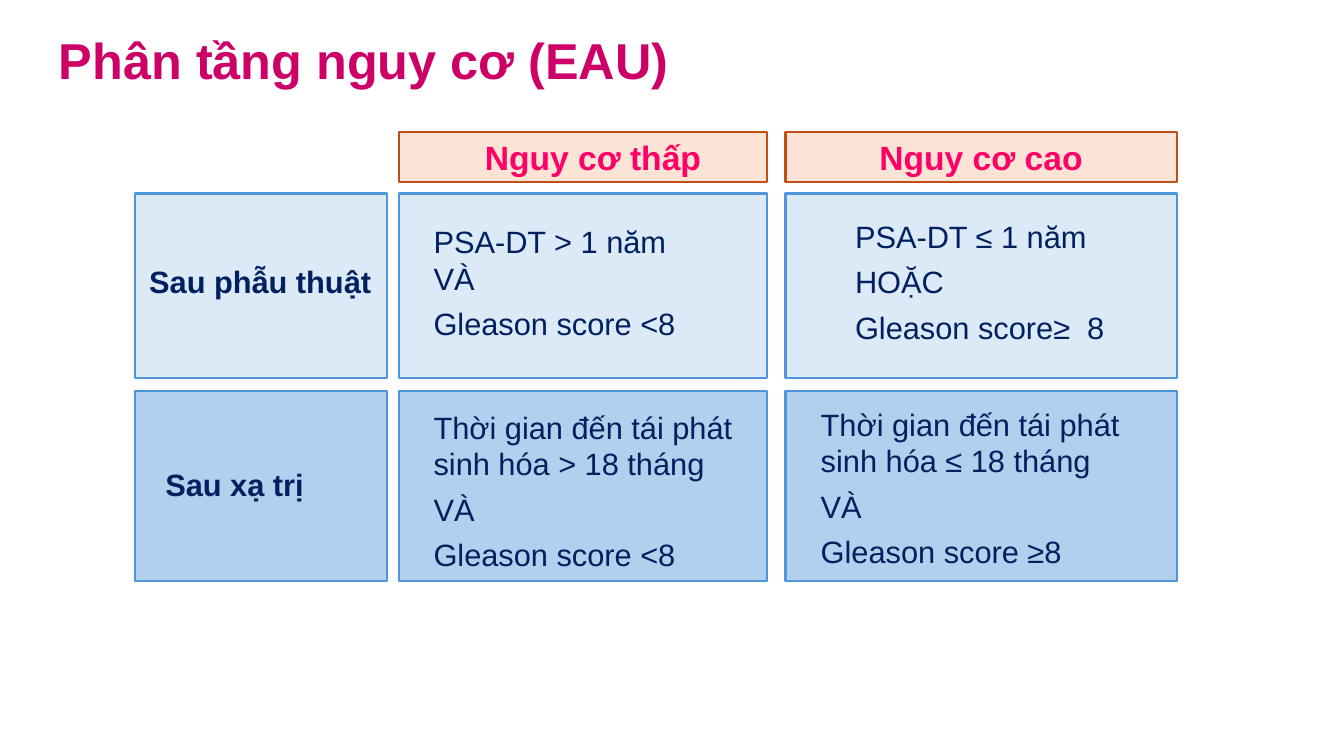
from pptx import Presentation
from pptx.dml.color import RGBColor as RGB
from pptx.enum.shapes import MSO_SHAPE as Shape
from pptx.enum.text import MSO_ANCHOR as Anchor, MSO_AUTO_SIZE as Auto, PP_ALIGN as Align
from pptx.util import Inches, Pt

ROSE = RGB(0xCC, 0x00, 0x66)
PINK = RGB(0xFF, 0x00, 0x66)
NAVY = RGB(0x00, 0x20, 0x60)
BLUE = RGB(0x4E, 0x95, 0xD9)
PALE = RGB(0xDC, 0xEA, 0xF7)
SKY = RGB(0xB1, 0xD0, 0xED)
PEACH = RGB(0xFB, 0xE3, 0xD6)
RUST = RGB(0xC0, 0x4F, 0x15)

COLS = [(1.34, 2.5), (3.96, 3.65), (7.79, 3.88)]
ROWS = [(1.31, 0.5), (1.92, 1.83), (3.88, 1.88)]


def write(shape, text, size=22, color=NAVY, bold=False, align=Align.LEFT,
          anchor=Anchor.TOP, pad=(0.1, 0.05, 0.1, 0.05)):
    frame = shape.text_frame
    frame.text = text
    frame.word_wrap = True
    frame.auto_size = Auto.NONE
    frame.vertical_anchor = anchor
    (frame.margin_left, frame.margin_top,
     frame.margin_right, frame.margin_bottom) = map(Inches, pad)
    for i, para in enumerate(frame.paragraphs):
        para.alignment = align
        para.line_spacing = 1.0
        para.space_before = Pt(6 if i else 0)
        font = para.font
        font.name = "Arial"
        font.size = Pt(size)
        font.bold = bold
        font.color.rgb = color


def card(slide, col, row, fill, line, text, **style):
    left, width = COLS[col]
    top, height = ROWS[row]
    box = slide.shapes.add_shape(Shape.RECTANGLE, *map(Inches, (left, top, width, height)))
    box.shadow.inherit = False
    box.fill.solid()
    box.fill.fore_color.rgb = fill
    box.line.color.rgb = line
    box.line.width = Pt(1.5)
    write(box, text, **style)


def head(slide, col, text, left):
    card(slide, col, 0, PEACH, RUST, text, size=24, color=PINK, bold=True,
         align=Align.CENTER, anchor=Anchor.MIDDLE, pad=(left, 0.05, 0.1, 0.05))


def band(slide, row, fill, cells):
    for col, (text, left, top, right) in enumerate(cells):
        card(slide, col, row, fill, BLUE, text, bold=col == 0, pad=(left, top, right, 0))


def main():
    deck = Presentation()
    deck.slide_width = Inches(13.33)
    deck.slide_height = Inches(7.5)
    slide = deck.slides.add_slide(deck.slide_layouts[5])

    title = slide.shapes.title
    title.left, title.top, title.width, title.height = map(Inches, (0.11, 0.25, 7, 0.68))
    write(title, "Phân tầng nguy cơ (EAU)", size=36, color=ROSE, bold=True,
          align=Align.CENTER, pad=(0.07, 0.04, 0.07, 0.04))

    head(slide, 1, "Nguy cơ thấp", 0.29)
    head(slide, 2, "Nguy cơ cao", 0.1)
    band(slide, 1, PALE, [
        ("Sau phẫu thuật", 0.14, 0.69, 0.05),
        ("PSA-DT > 1 năm VÀ\nGleason score <8", 0.34, 0.29, 0.64),
        ("PSA-DT ≤ 1 năm\nHOẶC\nGleason score≥  8", 0.69, 0.24, 0.5),
    ])
    band(slide, 2, SKY, [
        ("Sau xạ trị", 0.3, 0.74, 0.05),
        ("Thời gian đến tái phát sinh hóa > 18 tháng\nVÀ\nGleason score <8", 0.34, 0.17, 0.05),
        ("Thời gian đến tái phát sinh hóa ≤ 18 tháng\nVÀ\nGleason score ≥8", 0.35, 0.14, 0.5),
    ])
    deck.save("out.pptx")


if __name__ == "__main__":
    main()
